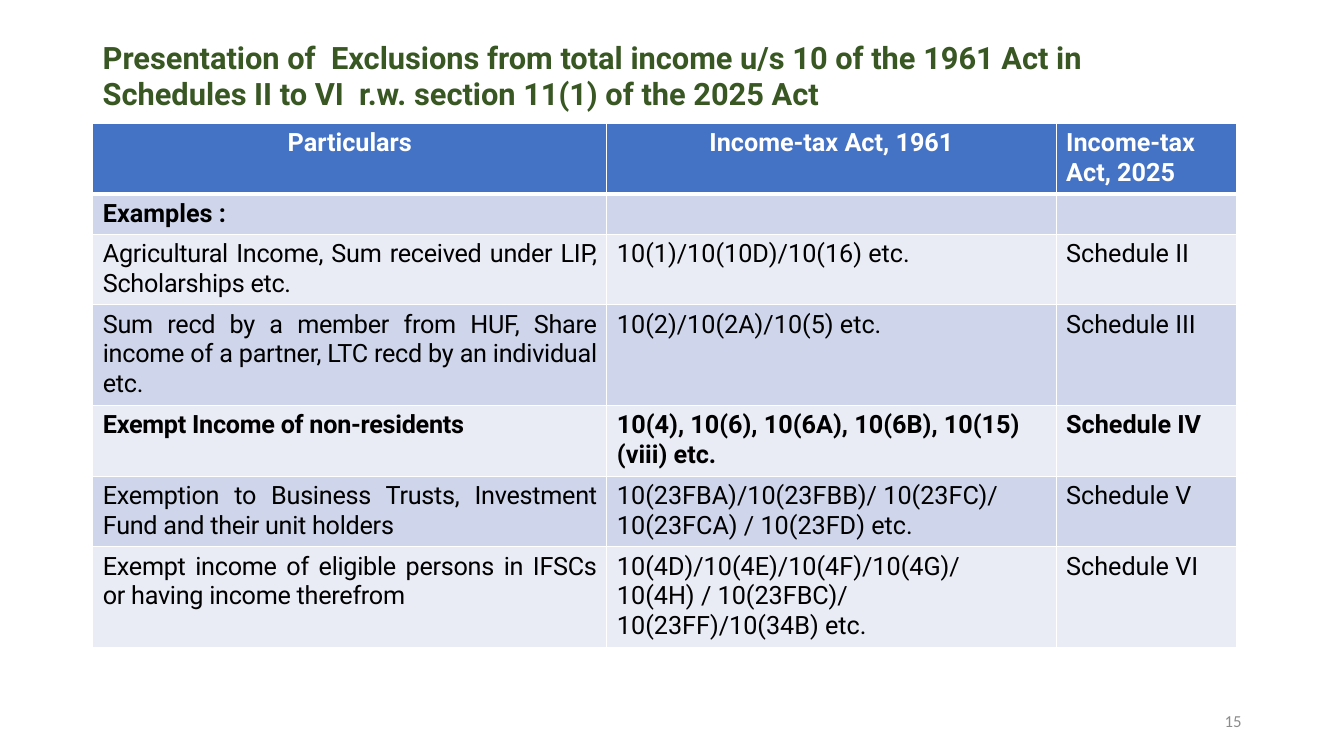
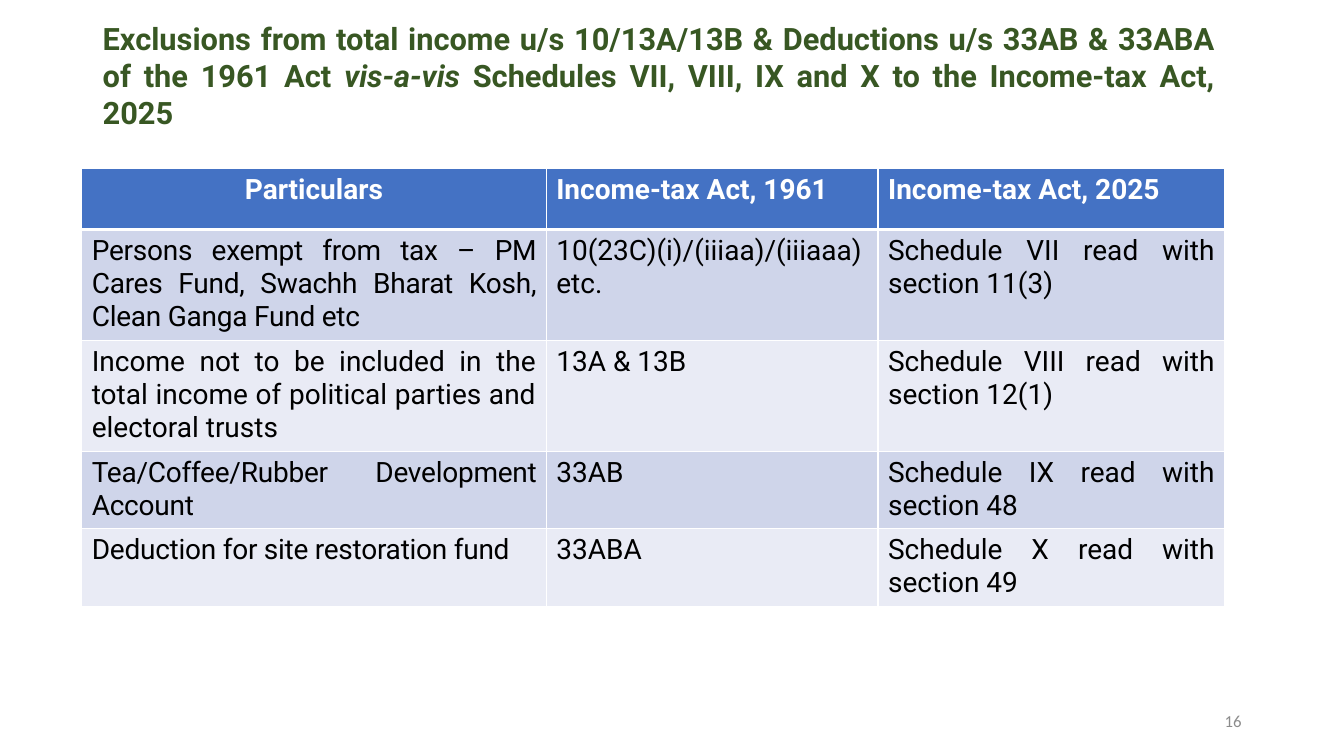
from dataclasses import dataclass
from typing import Any

from lxml.etree import SubElement
from pptx import Presentation
from pptx.dml.color import RGBColor
from pptx.enum.text import MSO_ANCHOR as Anchor, PP_ALIGN as Align
from pptx.oxml.ns import qn
from pptx.util import Pt

WHITE = RGBColor(0xFF, 0xFF, 0xFF)
BLACK = RGBColor(0, 0, 0)
GREEN = RGBColor(0x38, 0x57, 0x23)
HEADER_BLUE = RGBColor(0x44, 0x72, 0xC4)
BANDS = (RGBColor(0xCF, 0xD5, 0xEA), RGBColor(0xE9, 0xEB, 0xF5))
GREY = RGBColor(0x8C, 0x8C, 0x8C)

TITLE_FORMAT = {"name": "Roboto", "size": Pt(22), "bold": True, "color": GREEN}
NUMBER_FORMAT = {"name": "Calibri", "size": Pt(12), "color": GREY}
LEFT, CENTER, RIGHT, JUSTIFY = Align.LEFT, Align.CENTER, Align.RIGHT, Align.JUSTIFY


@dataclass(frozen=True)
class Piece:
    text: str
    italic: bool = False


@dataclass(frozen=True)
class Row:
    height: float
    cells: tuple[str, str, str]
    bold: bool = False
    tight: bool = True


@dataclass(frozen=True)
class Comparison:
    number: int
    title: tuple[Piece, ...]
    title_width: float
    title_align: Align
    left: float
    top: float
    widths: tuple[float, float, float]
    text_size: float
    header_height: float
    header_aligns: tuple[Align, Align, Align]
    body_aligns: tuple[Align, Align, Align]
    rows: tuple[Row, ...]


HEADINGS = ("Particulars", "Income-tax Act, 1961", "Income-tax Act, 2025")

COMPARISONS = (
    Comparison(
        number=15,
        title=(Piece("Presentation of  Exclusions from total income u/s 10 of the 1961 Act "
                     "in Schedules II to VI  r.w. section 11(1) of the 2025 Act"),),
        title_width=779.8, title_align=LEFT,
        left=66.3, top=88, widths=(367.2, 320.9, 128.6), text_size=18,
        header_height=49,
        header_aligns=(CENTER, CENTER, LEFT), body_aligns=(JUSTIFY, LEFT, LEFT),
        rows=(
            Row(28.1, ("Examples :", "", ""), bold=True, tight=False),
            Row(49, ("Agricultural Income, Sum received under LIP, Scholarships etc.",
                     "10(1)/10(10D)/10(16) etc.", "Schedule II")),
            Row(49, ("Sum recd by a member from HUF, Share income of a partner, "
                     "LTC recd by an individual etc.",
                     "10(2)/10(2A)/10(5) etc.", "Schedule III")),
            Row(49, ("Exempt Income of non-residents",
                     "10(4), 10(6), 10(6A), 10(6B), 10(15)(viii) etc.", "Schedule IV"),
                bold=True),
            Row(49, ("Exemption to Business Trusts, Investment Fund and their unit holders",
                     "10(23FBA)/10(23FBB)/ 10(23FC)/ 10(23FCA) / 10(23FD) etc.",
                     "Schedule V")),
            Row(49, ("Exempt income of eligible persons in IFSCs or having income therefrom",
                     "10(4D)/10(4E)/10(4F)/10(4G)/10(4H) / 10(23FBC)/ 10(23FF)/10(34B) etc.",
                     "Schedule VI")),
        ),
    ),
    Comparison(
        number=16,
        title=(Piece("Exclusions from total income u/s 10/13A/13B & Deductions u/s 33AB & "
                     "33ABA of the 1961 Act "),
               Piece("vis-a-vis", italic=True),
               Piece(" Schedules VII, VIII, IX and X to the Income-tax Act, 2025")),
        title_width=808.6, title_align=JUSTIFY,
        left=58.4, top=120, widths=(331.8, 237, 247.8), text_size=20,
        header_height=44,
        header_aligns=(CENTER, JUSTIFY, JUSTIFY), body_aligns=(JUSTIFY,) * 3,
        rows=(
            Row(44, ("Persons exempt from tax – PM Cares Fund, Swachh Bharat Kosh, "
                     "Clean Ganga Fund etc",
                     "10(23C)(i)/(iiiaa)/(iiiaaa) etc.",
                     "Schedule VII read with section 11(3)")),
            Row(25, ("Income not to be included in the total income of political parties "
                     "and electoral trusts",
                     "13A & 13B", "Schedule VIII read with section 12(1)"), tight=False),
            Row(42.5, ("Tea/Coffee/Rubber Development Account",
                       "33AB", "Schedule IX read with section 48")),
            Row(42.5, ("Deduction for site restoration fund",
                       "33ABA", "Schedule X read with section 49")),
        ),
    ),
)


def format_font(font: Any, values: dict[str, Any]) -> None:
    for key, value in values.items():
        if key == "color":
            font.color.rgb = value
        else:
            setattr(font, key, value)


def add_text(slide: Any, left: float, top: float, width: float, height: float,
             pieces: tuple[Piece, ...], align: Align, values: dict[str, Any]) -> None:
    frame = slide.shapes.add_textbox(Pt(left), Pt(top), Pt(width), Pt(height)).text_frame
    frame.word_wrap = True
    frame.vertical_anchor = Anchor.MIDDLE
    paragraph = frame.paragraphs[0]
    paragraph.alignment = align
    for piece in pieces:
        run = paragraph.add_run()
        run.text = piece.text
        format_font(run.font, values | {"italic": piece.italic})


def add_borders(cell: Any, top: float, bottom: float) -> None:
    properties = cell._tc.get_or_add_tcPr()
    for side, width in {"L": 1, "R": 1, "T": top, "B": bottom}.items():
        line = SubElement(properties, qn(f"a:ln{side}"), w=str(Pt(width)))
        fill = SubElement(line, qn("a:solidFill"))
        SubElement(fill, qn("a:srgbClr"), val=str(WHITE))


def fill_cell(cell: Any, text: str, align: Align, fill: RGBColor,
              values: dict[str, Any], tight: bool) -> None:
    cell.fill.solid()
    cell.fill.fore_color.rgb = fill
    paragraph = cell.text_frame.paragraphs[0]
    paragraph.alignment = align
    if not text:
        format_font(paragraph.font, values)
        return
    run = paragraph.add_run()
    run.text = text
    format_font(run.font, values)
    if tight:
        run._r.get_or_add_rPr().set("spc", "-20")


def add_comparison_table(slide: Any, comparison: Comparison) -> None:
    rows = (Row(comparison.header_height, HEADINGS, bold=True, tight=False),
            *comparison.rows)
    table = slide.shapes.add_table(
        len(rows), len(HEADINGS), Pt(comparison.left), Pt(comparison.top),
        Pt(sum(comparison.widths)), Pt(sum(row.height for row in rows))).table
    table.horz_banding = False
    for column, width in zip(table.columns, comparison.widths):
        column.width = Pt(width)
    for r, row in enumerate(rows):
        table.rows[r].height = Pt(row.height)
        header = r == 0
        aligns = comparison.header_aligns if header else comparison.body_aligns
        values = {"name": "Roboto", "size": Pt(comparison.text_size), "bold": row.bold,
                  "color": WHITE if header else BLACK}
        for c, (text, align) in enumerate(zip(row.cells, aligns)):
            cell = table.cell(r, c)
            add_borders(cell, top=3 if r == 1 else 1, bottom=3 if header else 1)
            fill_cell(cell, text, align, HEADER_BLUE if header else BANDS[(r - 1) % 2],
                      values, tight=row.tight and c == 0)


def main() -> None:
    deck = Presentation()
    deck.slide_width, deck.slide_height = Pt(960), Pt(540)
    for comparison in COMPARISONS:
        slide = deck.slides.add_slide(deck.slide_layouts[6])
        add_text(slide, 66.3, 1.5, comparison.title_width, 104.4,
                 comparison.title, comparison.title_align, TITLE_FORMAT)
        add_comparison_table(slide, comparison)
        add_text(slide, 678, 500.5, 216, 28.8,
                 (Piece(str(comparison.number)),), RIGHT, NUMBER_FORMAT)
    deck.save("out.pptx")


if __name__ == "__main__":
    main()
